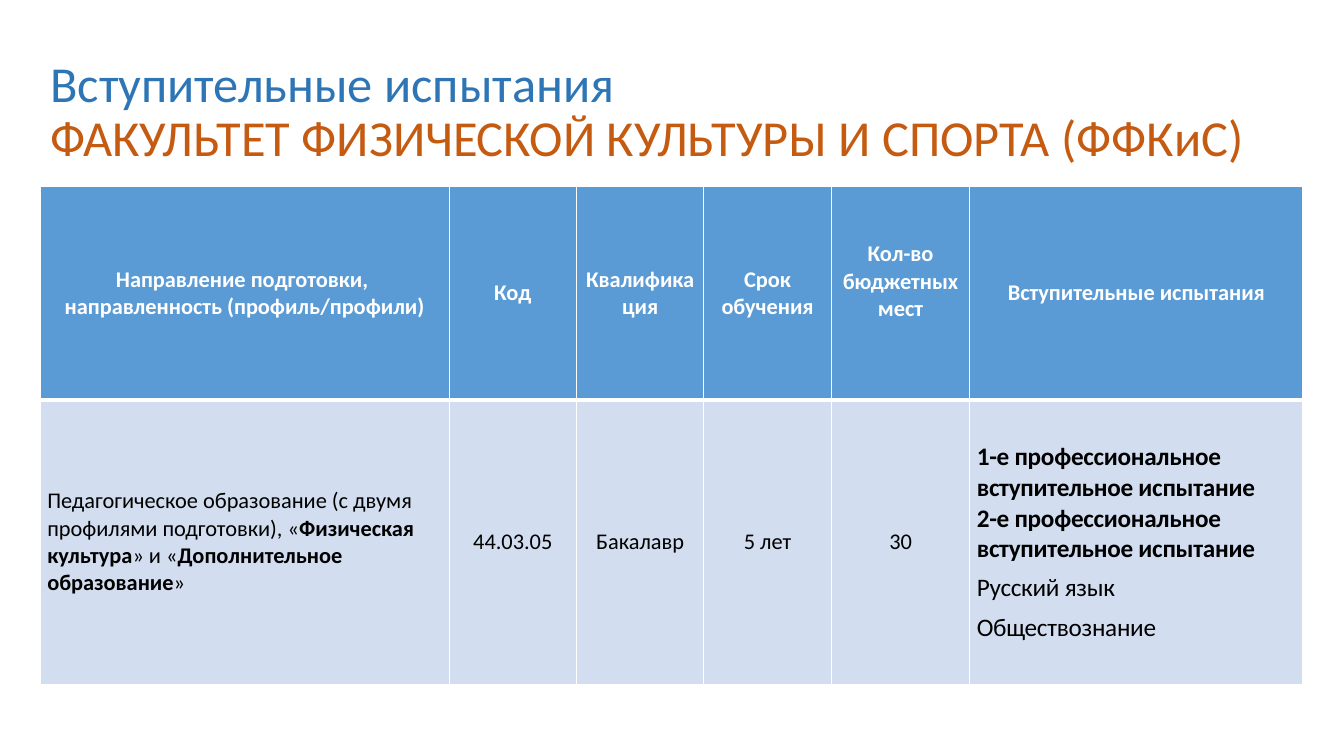
from lxml import etree
from pptx import Presentation
from pptx.dml.color import RGBColor
from pptx.enum import text as t
from pptx.oxml import ns
from pptx.util import Pt

BLUE = RGBColor(0x2E, 0x75, 0xB6)
RUST = RGBColor(0xC5, 0x5A, 0x11)
HEAD = RGBColor(0x5B, 0x9B, 0xD5)
PALE = RGBColor(0xD2, 0xDE, 0xEF)
WHITE = RGBColor(0xFF, 0xFF, 0xFF)
BLACK = RGBColor(0, 0, 0)

TITLE = [
    ("Вступительные испытания\n", BLUE),
    ("ФАКУЛЬТЕТ ФИЗИЧЕСКОЙ КУЛЬТУРЫ И СПОРТА (ФФКиС)", RUST),
]
LABELS = [
    ["Направление подготовки, ", "направленность (профиль/профили)"],
    ["Код"],
    ["Квалификация"],
    ["Срок обучения"],
    ["Кол-во бюджетных мест"],
    ["Вступительные испытания"],
]
COURSE = [
    ("Педагогическое образование (с двумя профилями подготовки), «", False),
    ("Физическая культура", True),
    ("» и «", False),
    ("Дополнительное образование", True),
    ("»", False),
]
FACTS = ["44.03.05", "Бакалавр", "5 лет", "30"]
EXAMS = [
    ("1-е профессиональное вступительное испытание\n"
     "2-е профессиональное вступительное испытание", True),
    ("Русский язык", False),
    ("Обществознание", False),
]
LEFT, TOP, WIDTH = 28.8, 133.2, 902
COLS = [292, 91, 91, 91, 99, 238]
ROWS = [152.6, 203]
LIFT = 17


def write(para, words, size=16, color=BLACK, bold=False, track=0):
    for i, part in enumerate(words.split("\n")):
        if i:
            para.add_line_break()
        if part:
            run = para.add_run()
            run.text = part
            font = run.font
            font.name, font.size, font.bold = "Calibri", Pt(size), bold
            font.color.rgb = color
            if track:
                run._r.get_or_add_rPr().set("spc", str(track))


def edge(cell, side, width):
    props = cell._tc.get_or_add_tcPr()
    line = etree.SubElement(props, ns.qn("a:" + side), w=str(Pt(width)))
    fill = etree.SubElement(line, ns.qn("a:solidFill"))
    etree.SubElement(fill, ns.qn("a:srgbClr"), val=str(WHITE))


def paras(frame, count):
    return [frame.paragraphs[0]] + [frame.add_paragraph() for _ in range(count - 1)]


def main():
    deck = Presentation()
    deck.slide_width, deck.slide_height = Pt(960), Pt(540)
    slide = deck.slides.add_slide(deck.slide_layouts[5])

    title = slide.shapes.title
    title.left, title.top = Pt(LEFT), Pt(LEFT)
    title.width, title.height = Pt(WIDTH), Pt(104.4)
    frame = title.text_frame
    frame.auto_size = t.MSO_AUTO_SIZE.NONE
    frame.word_wrap = True
    frame.vertical_anchor = t.MSO_ANCHOR.MIDDLE
    para = frame.paragraphs[0]
    para.alignment, para.line_spacing = t.PP_ALIGN.LEFT, 0.9
    for words, color in TITLE:
        write(para, words, size=36, color=color)

    table = slide.shapes.add_table(
        len(ROWS), len(COLS), Pt(LEFT), Pt(TOP), Pt(WIDTH), Pt(sum(ROWS))).table
    for col, width in zip(table.columns, COLS):
        col.width = Pt(width)
    for row, height in zip(table.rows, ROWS):
        row.height = Pt(height)

    for r, row in enumerate(table.rows):
        for cell in row.cells:
            cell.margin_left = cell.margin_right = Pt(5)
            cell.margin_top = cell.margin_bottom = 0
            cell.vertical_anchor = t.MSO_ANCHOR.MIDDLE
            for side in ("lnL", "lnR", "lnT", "lnB"):
                thick = (r, side) in ((0, "lnB"), (1, "lnT"))
                edge(cell, side, 3 if thick else 1)
            cell.fill.solid()
            cell.fill.fore_color.rgb = PALE if r else HEAD

    for c, lines in enumerate(LABELS):
        for para, words in zip(paras(table.cell(0, c).text_frame, len(lines)), lines):
            para.alignment = t.PP_ALIGN.CENTER
            write(para, words, color=WHITE, bold=True)
    table.cell(0, 4).margin_bottom = Pt(LIFT)

    para = table.cell(1, 0).text_frame.paragraphs[0]
    for words, bold in COURSE:
        write(para, words, bold=bold)
    for c, words in enumerate(FACTS, 1):
        para = table.cell(1, c).text_frame.paragraphs[0]
        para.alignment = t.PP_ALIGN.CENTER
        write(para, words)
    for para, (words, bold) in zip(paras(table.cell(1, 5).text_frame, len(EXAMS)), EXAMS):
        para.space_after = Pt(6)
        write(para, words, size=18, bold=bold, track=-20)

    deck.save("out.pptx")


if __name__ == "__main__":
    main()
